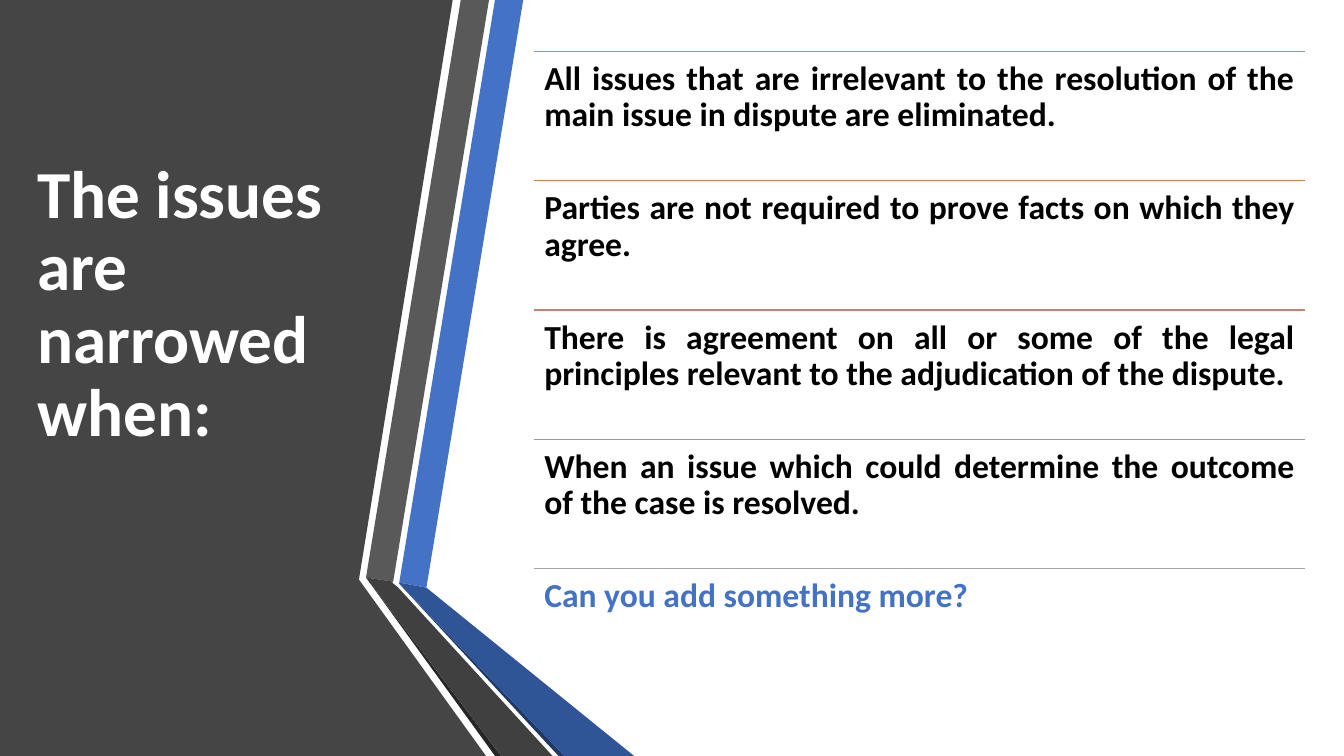
"""Build the slide on narrowing the issues: a folded ribbon panel and five ruled points."""
from dataclasses import dataclass

from lxml.etree import SubElement
from pptx import Presentation
from pptx.dml.color import RGBColor
from pptx.enum.shapes import MSO_CONNECTOR
from pptx.enum.text import MSO_ANCHOR, MSO_AUTO_SIZE, PP_ALIGN
from pptx.oxml.ns import qn
from pptx.slide import Slide
from pptx.text.text import TextFrame
from pptx.util import Inches, Pt

CELL = Inches(0.01)
COLUMNS, ROWS = 1333, 750
TITLE_ONLY = 5
FONT = "Calibri"
TITLE = "The issues are narrowed when:"
LIST_LEFT, LIST_TOP, LIST_WIDTH, ROW_HEIGHT = 530, 51, 764, 128.25

COLOURS = {
    "panel": "454545",
    "blue": "4472C4",
    "blue_fold": "2F5597",
    "blue_shade": "203864",
    "grey": "595959",
    "grey_fold": "404040",
    "grey_shade": "262626",
    "white": "FFFFFF",
    "black": "000000",
    "rule_1": "ED7D31",
    "rule_2": "D87A51",
    "rule_3": "C48170",
    "rule_4": "B4908B",
    "rule_5": "A5A5A5",
}


@dataclass(frozen=True)
class Facet:
    """A filled polygon with its corners in grid cells."""

    colour: str
    corners: tuple[tuple[int, int], ...]


@dataclass(frozen=True)
class Point:
    """A ruled row of the list."""

    text: str
    rule: str
    colour: str = "black"


FACETS = (
    Facet("panel", ((0, 0), (449, 0), (356, 575), (482, ROWS), (0, ROWS))),
    Facet("blue", ((396, 578), (423, 583), (519, 0), (491, 0))),
    Facet("grey", ((485, 0), (457, 0), (363, 573), (390, 577))),
    Facet("grey_shade", ((363, 573), (491, ROWS), (497, ROWS))),
    Facet("blue_shade", ((396, 579), (554, ROWS), (560, ROWS))),
    Facet("blue_fold", ((396, 578), (396, 579), (560, ROWS), (629, ROWS), (423, 583))),
    Facet("grey_fold", ((363, 573), (497, ROWS), (548, ROWS), (395, 583), (389, 578), (390, 577))),
)

POINTS = (
    Point("All issues that are irrelevant to the resolution of the main issue in dispute are eliminated.", "rule_1"),
    Point("Parties are not required to prove facts on which they agree.", "rule_2"),
    Point("There is agreement on all or some of the legal principles relevant to the adjudication of the dispute.", "rule_3"),
    Point("When an issue which could determine the outcome of the case is resolved.", "rule_4"),
    Point("Can you add something more?", "rule_5", "blue"),
)


def colour_of(name: str) -> RGBColor:
    """Look up a named colour."""
    return RGBColor.from_string(COLOURS[name])


def cells(count: float) -> int:
    """Convert grid cells to a length."""
    return round(count * CELL)


def write(frame: TextFrame, text: str, size: int, colour: str, alignment: PP_ALIGN) -> None:
    """Fill a text frame with one bold paragraph."""
    frame.text = text
    frame.word_wrap = True
    frame.auto_size = MSO_AUTO_SIZE.NONE
    para = frame.paragraphs[0]
    para.alignment = alignment
    para.line_spacing = 0.9
    font = para.runs[0].font
    font.name, font.size, font.bold = FONT, Pt(size), True
    font.color.rgb = colour_of(colour)


def draw_facet(page: Slide, facet: Facet) -> None:
    """Draw one facet of the folded panel."""
    start, *others = facet.corners
    builder = page.shapes.build_freeform(*start, scale=CELL)
    builder.add_line_segments(others, close=True)
    shape = builder.convert_to_shape()
    shape.shadow.inherit = False
    shape.fill.solid()
    shape.fill.fore_color.rgb = colour_of(facet.colour)
    shape.line.fill.background()


def draw_title(page: Slide) -> None:
    """Place the title on the dark panel."""
    title = page.shapes.title
    title.left, title.top, title.width, title.height = map(cells, (27, 24, 304, 558))
    title.text_frame.vertical_anchor = MSO_ANCHOR.MIDDLE
    write(title.text_frame, TITLE, 48, "white", PP_ALIGN.LEFT)


def draw_point(page: Slide, point: Point, row: int) -> None:
    """Draw a rule with its text beneath."""
    left, width = cells(LIST_LEFT), cells(LIST_WIDTH)
    top = cells(LIST_TOP + row * ROW_HEIGHT)
    rule = page.shapes.add_connector(MSO_CONNECTOR.STRAIGHT, left, top, left + width, top)
    rule.line.color.rgb = colour_of(point.rule)
    rule.line.width = Pt(1)
    SubElement(rule.element.spPr, qn("a:effectLst"))

    box = page.shapes.add_textbox(left, top, width, cells(ROW_HEIGHT))
    frame = box.text_frame
    frame.margin_left = frame.margin_right = frame.margin_top = frame.margin_bottom = cells(10)
    write(frame, point.text, 24, point.colour, PP_ALIGN.JUSTIFY)


def main() -> None:
    """Assemble and save the deck."""
    deck = Presentation()
    deck.slide_width, deck.slide_height = cells(COLUMNS), cells(ROWS)
    page = deck.slides.add_slide(deck.slide_layouts[TITLE_ONLY])
    for facet in FACETS:
        draw_facet(page, facet)
    title_element = page.shapes.title.element
    page.shapes.element.append(title_element)
    draw_title(page)
    for row, point in enumerate(POINTS):
        draw_point(page, point, row)
    deck.save("out.pptx")


if __name__ == "__main__":
    main()
